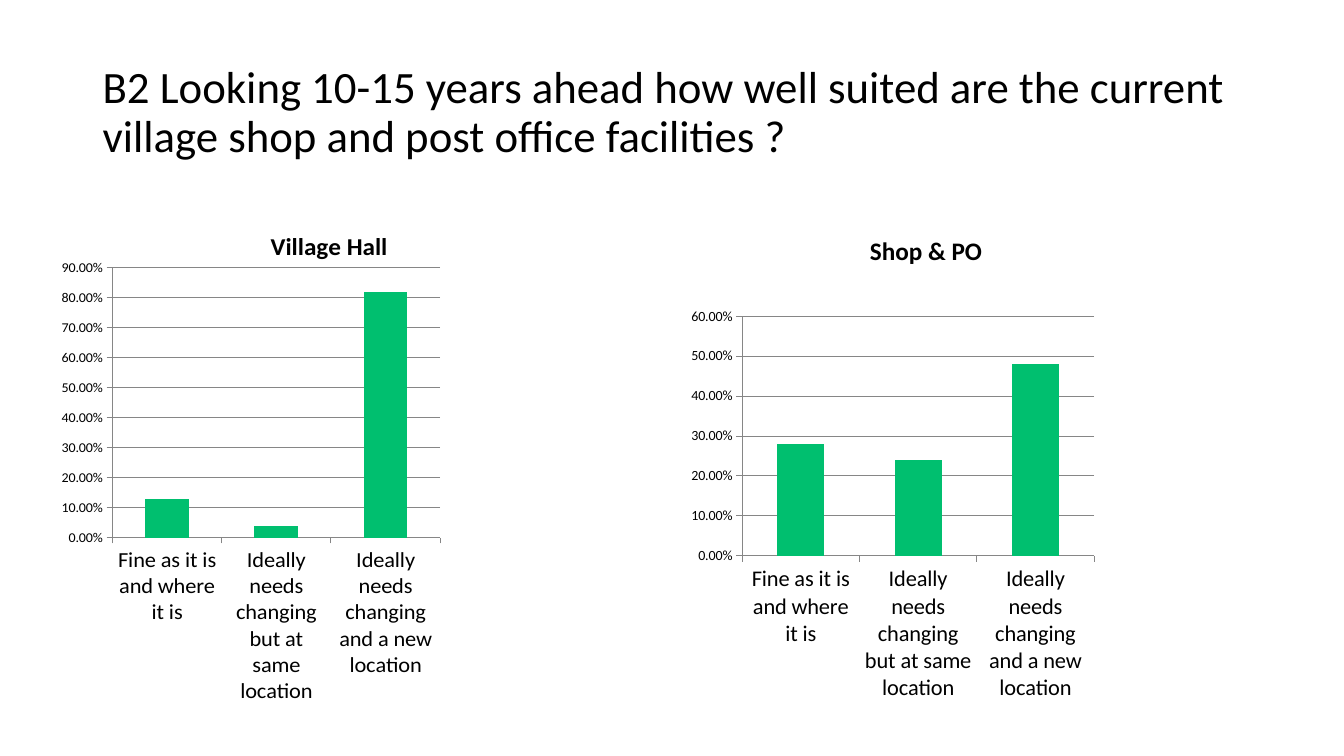
from lxml import etree
from pptx import Presentation
from pptx.chart.data import CategoryChartData
from pptx.dml.color import RGBColor
from pptx.enum.chart import XL_CHART_TYPE as ChartType, XL_TICK_MARK as TickMark
from pptx.enum.text import MSO_ANCHOR as Anchor
from pptx.oxml.ns import qn
from pptx.util import Inches, Pt

ANSWERS = (
    "Fine as it is and where it is",
    "Ideally needs changing but at same location",
    "Ideally needs changing and a new location",
)


def color(value):
    return RGBColor.from_string(value)


class SurveySlide:
    font = "Calibri"
    ink = "000000"
    bar = "00BF6F"
    rule = "868686"

    def __init__(self, page):
        self.page = page

    def style(self, font, size, bold=False):
        font.name = self.font
        font.size = Pt(size)
        font.bold = bold
        font.color.rgb = color(self.ink)

    def heading(self, text, area):
        box = self.page.shapes.add_textbox(*map(Inches, area))
        frame = box.text_frame
        frame.word_wrap = True
        frame.vertical_anchor = Anchor.MIDDLE
        frame.text = text
        para = frame.paragraphs[0]
        para.line_spacing = 0.9
        self.style(para.runs[0].font, 32)

    def column_chart(self, title, values, top_value, area, plot_area):
        data = CategoryChartData(number_format="0.00%")
        data.categories = ANSWERS
        data.add_series("Series 1", values)
        frame = self.page.shapes.add_chart(
            ChartType.COLUMN_CLUSTERED, *map(Inches, area), data)
        chart = frame.chart
        self.style(chart.font, 10)
        chart.has_legend = False
        chart.has_title = True
        chart.chart_title.include_in_layout = False
        title_frame = chart.chart_title.text_frame
        title_frame.text = title
        self.style(title_frame.paragraphs[0].runs[0].font, 18, True)

        plot = chart.plots[0]
        plot.gap_width = 150
        plot.vary_by_categories = False
        fill = plot.series[0].format.fill
        fill.solid()
        fill.fore_color.rgb = color(self.bar)

        self.axis(chart.category_axis, 16)
        scale = chart.value_axis
        self.axis(scale, 10)
        scale.minimum_scale = 0
        scale.maximum_scale = top_value
        scale.major_unit = 0.1
        scale.tick_labels.number_format = "0.00%"
        scale.tick_labels.number_format_is_linked = False
        scale.has_major_gridlines = True
        self.line(scale.major_gridlines.format.line)
        self.place_plot(chart, plot_area)

    def axis(self, axis, size):
        axis.major_tick_mark = TickMark.OUTSIDE
        axis.minor_tick_mark = TickMark.NONE
        self.style(axis.tick_labels.font, size)
        self.line(axis.format.line)

    def line(self, line):
        line.color.rgb = color(self.rule)
        line.width = Pt(0.75)

    def place_plot(self, chart, plot_area):
        plot = chart.element.find(".//" + qn("c:plotArea"))
        for layout in plot.findall(qn("c:layout")):
            plot.remove(layout)
        layout = etree.Element(qn("c:layout"))
        plot.insert(0, layout)
        manual = etree.SubElement(layout, qn("c:manualLayout"))
        settings = [("layoutTarget", "inner"), ("xMode", "edge"), ("yMode", "edge")]
        settings += zip("xywh", plot_area)
        for name, value in settings:
            etree.SubElement(manual, qn("c:" + name)).set("val", str(value))


def main():
    deck = Presentation()
    deck.slide_width = Inches(13.33)
    deck.slide_height = Inches(7.5)
    survey = SurveySlide(deck.slides.add_slide(deck.slide_layouts[6]))
    survey.heading(
        "B2 Looking 10-15 years ahead how well suited are the current "
        "village shop and post office facilities ?",
        (0.92, 0.4, 11.5, 1.45))
    survey.column_chart("Village Hall", (0.13, 0.04, 0.82), 0.9,
                        (0.51, 2.09, 5.51, 4.9), (0.11, 0.12, 0.59, 0.57))
    survey.column_chart("Shop & PO", (0.28, 0.24, 0.48), 0.6,
                        (6.58, 2.12, 5.21, 4.85), (0.15, 0.21, 0.67, 0.49))
    deck.save("out.pptx")


if __name__ == "__main__":
    main()
